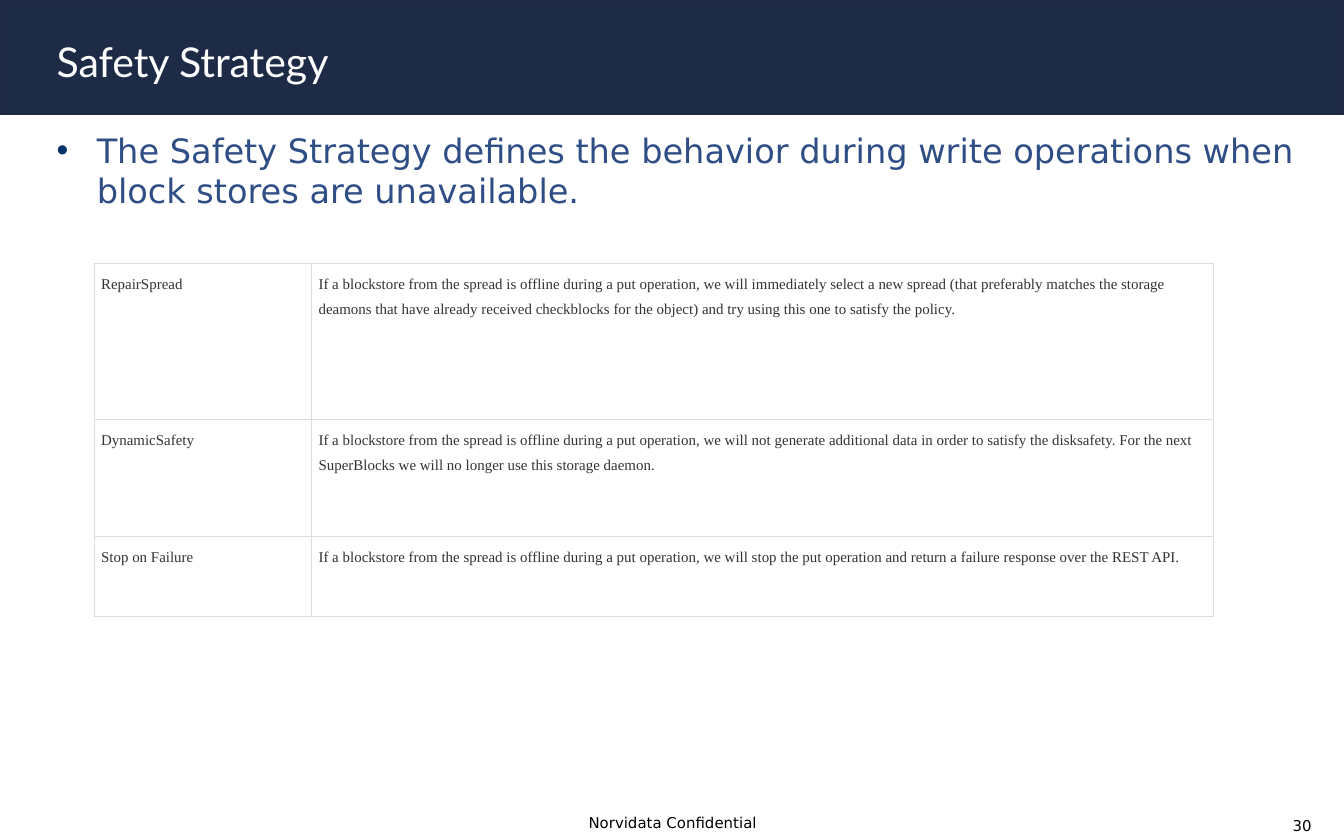
"""Build the Safety Strategy slide."""
from lxml import etree
from pptx import Presentation
from pptx import util as u
from pptx.dml.color import RGBColor
from pptx.enum import shapes, text
from pptx.oxml.ns import qn

WHITE = RGBColor(0xFF, 0xFF, 0xFF)
NAVY = RGBColor(0x1E, 0x2B, 0x47)
EDGE = RGBColor(0x20, 0x29, 0x42)
BLUE = RGBColor(0x2F, 0x4E, 0x85)
DOT = RGBColor(0x00, 0x33, 0x66)
GREY = RGBColor(0x33, 0x33, 0x33)
RULE = RGBColor(0xDD, 0xDD, 0xDD)
BLACK = RGBColor(0, 0, 0)

TITLE = "Safety Strategy"
POINT = ("The Safety Strategy defines the behavior during write operations "
         "when block stores are unavailable.")
START = "If a blockstore from the spread is offline during a put operation, we will "
MODES = [
    ("RepairSpread", 2.95,
     "immediately select a new spread (that preferably matches the storage deamons "
     "that have already received checkblocks for the object) and try using this one "
     "to satisfy the policy."),
    ("DynamicSafety", 2.21,
     "not generate additional data in order to satisfy the disksafety. For the next "
     "SuperBlocks we will no longer use this storage daemon."),
    ("Stop on Failure", 1.52,
     "stop the put operation and return a failure response over the REST API."),
]
COLS = (4.11, 17.05)
FOOT = [
    ("Norvidata Confidential", (6.15, 15.34, 13.13, 0.43), text.PP_ALIGN.CENTER),
    ("30", (20.14, 15.42, 4.85, 0.36), text.PP_ALIGN.RIGHT),
]

HEAD = {"name": "Lato", "size": u.Pt(22), "color": WHITE}
BODY = {"name": "DejaVu Sans", "size": u.Pt(18), "color": BLUE}
CELL = {"name": "Times New Roman", "size": u.Pt(8), "color": GREY}
NOTE = {"name": "DejaVu Sans", "size": u.Pt(8), "color": BLACK}


def cms(*vals):
    return [u.Cm(val) for val in vals]


def put(obj, vals):
    for key, val in vals.items():
        setattr(obj, key, val)


def pad(obj, side, top):
    put(obj, {"margin_left": u.Cm(side), "margin_right": u.Cm(side),
              "margin_top": u.Cm(top), "margin_bottom": u.Cm(top)})


def write(frame, words, font, **form):
    para = frame.paragraphs[0]
    put(para, form)
    run = para.add_run()
    run.text = words
    for key, val in font.items():
        if key == "color":
            run.font.color.rgb = val
        else:
            setattr(run.font, key, val)
    return para


def box(slide, spot, side, top, anchor):
    frame = slide.shapes.add_textbox(*cms(*spot)).text_frame
    put(frame, {"word_wrap": True, "vertical_anchor": anchor})
    pad(frame, side, top)
    return frame


def bullet(para):
    prop = para._p.get_or_add_pPr()
    put_in = {"marL": u.Cm(0.76), "indent": u.Cm(-0.76)}
    for key, val in put_in.items():
        prop.set(key, str(val))
    tint = etree.SubElement(prop, qn("a:buClr"))
    etree.SubElement(tint, qn("a:srgbClr"), val=str(DOT))
    etree.SubElement(prop, qn("a:buFont"), typeface="Arial")
    etree.SubElement(prop, qn("a:buChar"), char="•")


def border(cell):
    prop = cell._tc.get_or_add_tcPr()
    for side in ("lnL", "lnR", "lnT", "lnB"):
        line = etree.SubElement(prop, qn("a:" + side), w=str(u.Pt(0.75)))
        fill = etree.SubElement(line, qn("a:solidFill"))
        etree.SubElement(fill, qn("a:srgbClr"), val=str(RULE))


def head(slide):
    band = slide.shapes.add_shape(shapes.MSO_SHAPE.RECTANGLE, *cms(0, 0, 25.4, 2.16))
    band.shadow.inherit = False
    band.fill.solid()
    band.fill.fore_color.rgb = NAVY
    band.line.color.rgb = EDGE
    band.line.width = u.Pt(0.75)
    slide.shapes._spTree.insert(2, band._element)
    title = slide.shapes.title
    put(title, dict(zip(("left", "top", "width", "height"),
                        cms(1.07, 0.18, 16.76, 1.9))))
    frame = title.text_frame
    put(frame, {"word_wrap": True, "auto_size": text.MSO_AUTO_SIZE.NONE,
                "vertical_anchor": text.MSO_ANCHOR.MIDDLE})
    pad(frame, 0, 0)
    write(frame, TITLE, HEAD, alignment=text.PP_ALIGN.LEFT, line_spacing=1.04)


def grid(slide):
    tall = sum(mode[1] for mode in MODES)
    spot = cms(1.78, 4.98, sum(COLS), tall)
    table = slide.shapes.add_table(len(MODES), len(COLS), *spot).table
    put(table, {"first_row": False, "horz_banding": False})
    for col, wide in zip(table.columns, COLS):
        col.width = u.Cm(wide)
    for row, (name, high, rest) in zip(table.rows, MODES):
        row.height = u.Cm(high)
        for cell, words in zip(row.cells, (name, START + rest)):
            pad(cell, 0.13, 0.1)
            border(cell)
            cell.fill.background()
            write(cell.text_frame, words, CELL, line_spacing=u.Pt(13))


def main():
    deck = Presentation()
    put(deck, {"slide_width": u.Cm(25.4), "slide_height": u.Cm(15.88)})
    slide = deck.slides.add_slide(deck.slide_layouts[5])
    head(slide)
    frame = box(slide, (1.07, 2.46, 23.93, 12.52), 0, 0, text.MSO_ANCHOR.TOP)
    bullet(write(frame, POINT, BODY, space_after=u.Pt(1.2)))
    grid(slide)
    for words, spot, side in FOOT:
        frame = box(slide, spot, 0.2, 0.1, text.MSO_ANCHOR.MIDDLE)
        write(frame, words, NOTE, alignment=side)
    deck.save("out.pptx")


if __name__ == "__main__":
    main()
